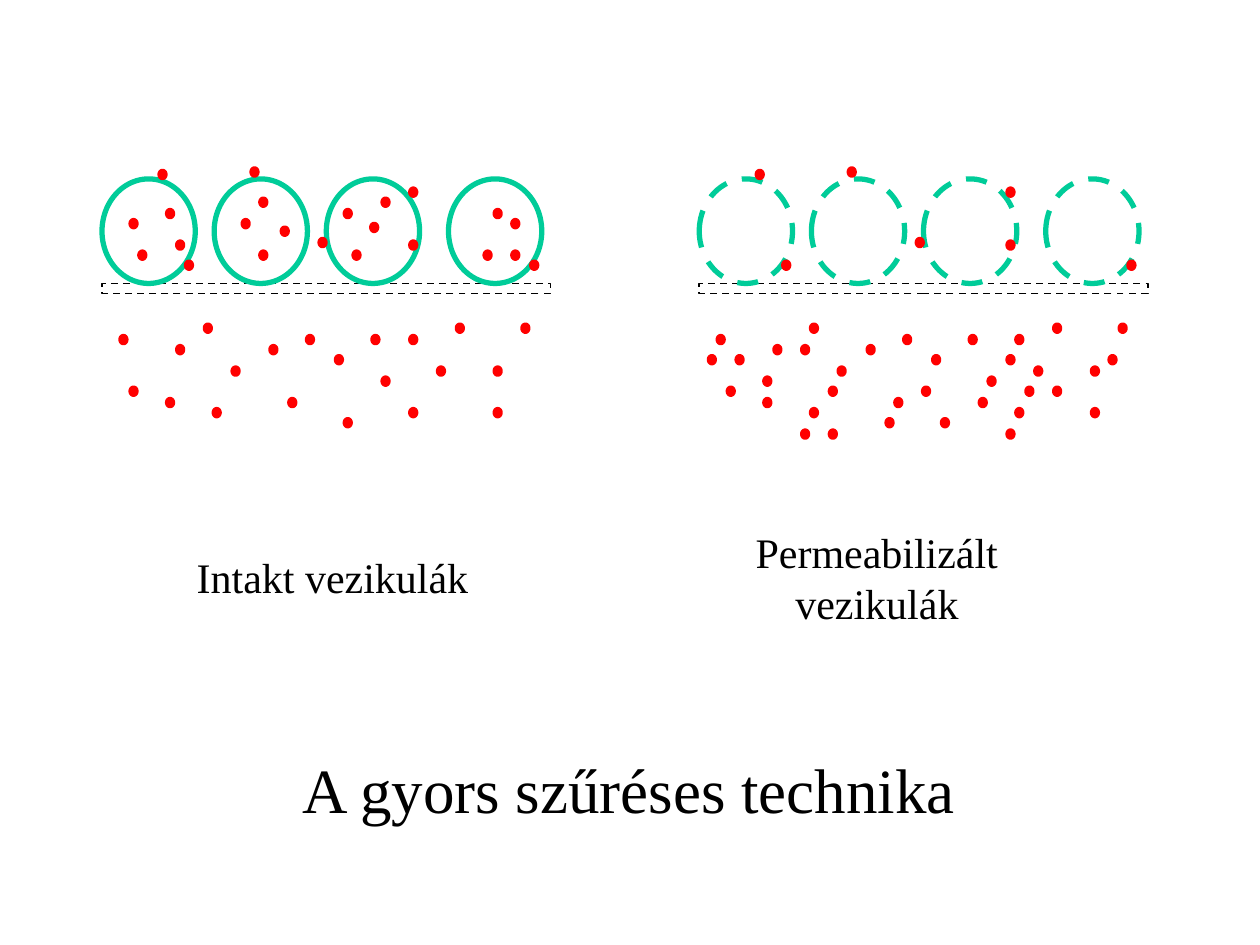
"""Build a slide that compares intact and permeabilized vesicles."""
from pptx import Presentation
from pptx.dml.color import RGBColor
from pptx.enum.dml import MSO_LINE
from pptx.enum.shapes import MSO_SHAPE
from pptx.enum.text import MSO_ANCHOR, PP_ALIGN
from pptx.util import Inches, Pt

BLACK = RGBColor(0x00, 0x00, 0x00)
WHITE = RGBColor(0xFF, 0xFF, 0xFF)
GREEN = RGBColor(0x00, 0xCC, 0x99)
RED = RGBColor(0xFF, 0x00, 0x00)
OVAL = MSO_SHAPE.OVAL
RECT = MSO_SHAPE.RECTANGLE
DASH = MSO_LINE.DASH
SOLID = MSO_LINE.SOLID
CENTER = PP_ALIGN.CENTER
MIDDLE = MSO_ANCHOR.MIDDLE
FONT = "Times New Roman"
SHIFT = 4.74

deck = Presentation()
deck.slide_width = Inches(10)
deck.slide_height = Inches(7.5)
slide = deck.slides.add_slide(deck.slide_layouts[6])


def add_shape(kind, box, fill, color, width, dash=SOLID):
    shape = slide.shapes.add_shape(kind, *map(Inches, box))
    shape.shadow.inherit = False
    if fill is None:
        shape.fill.background()
    else:
        shape.fill.solid()
        shape.fill.fore_color.rgb = fill
    shape.line.color.rgb = color
    shape.line.width = Pt(width)
    shape.line.dash_style = dash


def add_text(text, box, size):
    frame = slide.shapes.add_textbox(*map(Inches, box)).text_frame
    frame.word_wrap = True
    frame.vertical_anchor = MIDDLE
    frame.text = text
    line = frame.paragraphs[0]
    line.alignment = CENTER
    font = line.runs[0].font
    font.name = FONT
    font.size = Pt(size)
    font.color.rgb = BLACK


cells = [0.81, 1.7, 2.59, 3.56]
inner = [
    (1.04, 1.75), (1.33, 1.67), (1.11, 2), (1.41, 1.92),
    (1.93, 1.75), (2.07, 2), (2.07, 1.58), (2.24, 1.81),
    (2.74, 1.67), (2.81, 2), (3.04, 1.58), (2.95, 1.78),
    (3.93, 1.67), (4.07, 1.75), (3.85, 2), (4.07, 2),
]
outer = [
    (1.27, 1.36), (1.48, 2.08), (2, 1.34), (2.54, 1.9),
    (3.26, 1.5), (3.26, 1.92), (4.22, 2.08),
]
below = [
    (2.15, 2.75), (1.04, 3.08), (3.63, 2.58), (1.41, 2.75), (2.67, 2.83),
    (4.15, 2.58), (2.44, 2.67), (2.96, 2.67), (3.93, 2.92), (0.96, 2.67),
    (1.7, 3.25), (3.48, 2.92), (1.33, 3.17), (2.74, 3.33), (3.93, 3.25),
]
loose = [
    (1.85, 2.92), (2.3, 3.17), (1.63, 2.58),
    (3.26, 2.67), (3.04, 3), (3.26, 3.25),
]
leaked = [
    (5.85, 2.83), (6.59, 3.42), (8.37, 3.08), (6.07, 3), (7.33, 3.08),
    (8.81, 2.83), (6.59, 3.08), (7.04, 3.33), (6.37, 2.75), (8, 2.83),
    (7.78, 3.17), (8, 3.42), (5.63, 2.83), (6.37, 3.42), (8.15, 3.08),
]

for shift, dash in [(0, SOLID), (SHIFT, DASH)]:
    add_shape(RECT, (0.81 + shift, 2.25, 3.56, 0.08), WHITE, BLACK, 1, DASH)
    for left in cells:
        add_shape(OVAL, (left + shift, 1.42, 0.74, 0.83), None, GREEN, 3, dash)

dots = inner + outer + below + loose + leaked
dots += [(left + SHIFT, top) for left, top in outer + below]
dots += [(left + 4.81, top) for left, top in loose]
for left, top in dots:
    add_shape(OVAL, (left, top, 0.04, 0.05), RED, RED, 3)

add_text("Intakt vezikulák", (0.89, 4.33, 3.5, 0.5), 24)
add_text("Permeabilizált vezikulák", (5.21, 4.33, 3.5, 0.5), 24)
add_text("A gyors szűréses technika", (0.74, 5.92, 8.5, 0.67), 36)

deck.save("out.pptx")
